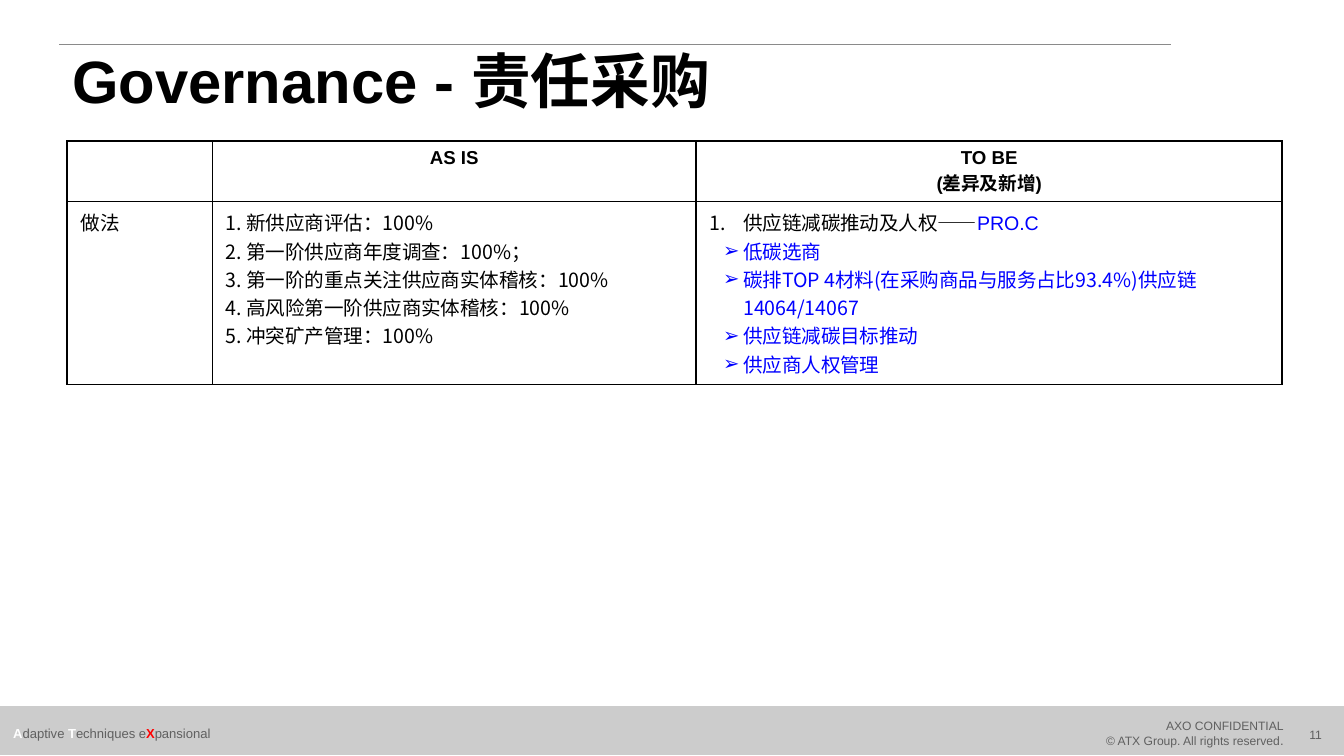
from lxml import etree
from pptx import Presentation
from pptx.dml.color import RGBColor
from pptx.enum.shapes import MSO_CONNECTOR, MSO_SHAPE
from pptx.enum.text import MSO_ANCHOR, PP_ALIGN
from pptx.oxml.ns import qn
from pptx.util import Inches, Pt

LEFT, CENTER, RIGHT = PP_ALIGN.LEFT, PP_ALIGN.CENTER, PP_ALIGN.RIGHT
MIDDLE = MSO_ANCHOR.MIDDLE
RECTANGLE = MSO_SHAPE.RECTANGLE
STRAIGHT = MSO_CONNECTOR.STRAIGHT

LATIN, CHINESE = "Arial", "Noto Sans CJK SC"
BLACK, WHITE, BLUE, RED = "000000", "FFFFFF", "0000FF", "FF0000"
GREY, BAR_GREY, RULE_GREY = "606060", "CCCCCC", "8A8A8A"

COLUMNS = [1.08, 3.6, 4.36]
ROWS = [0.45, 1.36]
HEADINGS = [[], ["AS IS"], ["TO BE", "(差异及新增)"]]
CURRENT = [
    "1. 新供应商评估：100%",
    "2. 第一阶供应商年度调查：100%；",
    "3. 第一阶的重点关注供应商实体稽核：100%",
    "4. 高风险第一阶供应商实体稽核：100%",
    "5. 冲突矿产管理：100%",
]
PLANNED = [
    "低碳选商",
    "碳排TOP 4材料(在采购商品与服务占比93.4%)供应链14064/14067",
    "供应链减碳目标推动",
    "供应商人权管理",
]


def color(value):
    return RGBColor.from_string(value)


def add_span(para, text, size=10.5, font=LATIN, fill=BLACK, bold=False):
    span = para.add_run()
    span.text = text
    span.font.size = Pt(size)
    span.font.name = font
    span.font.bold = bold
    span.font.color.rgb = color(fill)
    east_asian = etree.SubElement(span._r.get_or_add_rPr(), qn("a:ea"))
    east_asian.set("typeface", CHINESE)


def next_para(frame, align=LEFT):
    first = frame.paragraphs[0]
    para = frame.add_paragraph() if first.runs else first
    para.alignment = align
    return para


def add_bullet(para, tag, hanging, **attributes):
    properties = para._p.get_or_add_pPr()
    properties.set("marL", str(Inches(0.25)))
    properties.set("indent", str(-Inches(hanging)))
    etree.SubElement(properties, qn("a:buFont"), typeface=LATIN)
    bullet = etree.SubElement(properties, qn(tag))
    for name, value in attributes.items():
        bullet.set(name, value)


def add_box(page, left, top, width, height):
    box = page.shapes.add_textbox(Inches(left), Inches(top), Inches(width), Inches(height))
    frame = box.text_frame
    frame.word_wrap = True
    frame.vertical_anchor = MIDDLE
    return frame


def add_title(page, left, top, width, height):
    rule = page.shapes.add_connector(
        STRAIGHT, Inches(left), Inches(top), Inches(left + 8.27), Inches(top))
    rule.line.color.rgb = color(RULE_GREY)
    rule.line.width = Pt(0.5)
    etree.SubElement(rule._element.spPr, qn("a:effectLst"))
    para = next_para(add_box(page, left, top + 0.02, width, height))
    para.line_spacing = 0.9
    add_span(para, "Governance - 责任采购", size=32, bold=True)


def style_cell(cell):
    cell.fill.background()
    properties = cell._tc.get_or_add_tcPr()
    for position, side in enumerate(["a:lnL", "a:lnR", "a:lnT", "a:lnB"]):
        border = etree.Element(qn(side), w=str(Pt(1)))
        solid = etree.SubElement(border, qn("a:solidFill"))
        etree.SubElement(solid, qn("a:srgbClr"), val=BLACK)
        properties.insert(position, border)


def add_comparison(page, left, top):
    table = page.shapes.add_table(
        len(ROWS), len(COLUMNS), Inches(left), Inches(top),
        Inches(sum(COLUMNS)), Inches(sum(ROWS))).table
    for column, width in zip(table.columns, COLUMNS):
        column.width = Inches(width)
    for row, height in zip(table.rows, ROWS):
        row.height = Inches(height)
    for cell in table.iter_cells():
        style_cell(cell)

    for index, lines in enumerate(HEADINGS):
        for line in lines:
            para = next_para(table.cell(0, index).text_frame, CENTER)
            add_span(para, line, size=10, bold=True)

    practice, current, planned = [table.cell(1, i).text_frame for i in range(3)]
    add_span(next_para(practice), "做法")
    for line in CURRENT:
        add_span(next_para(current), line, font=CHINESE)

    para = next_para(planned)
    add_bullet(para, "a:buAutoNum", 0.25, type="arabicPeriod")
    add_span(para, "供应链减碳推动及人权——")
    add_span(para, "PRO.C", fill=BLUE)
    for line in PLANNED:
        para = next_para(planned)
        add_bullet(para, "a:buChar", 0.15, char="➢")
        add_span(para, line, font=CHINESE, fill=BLUE)


def add_footer(page, left, top, width, height):
    bar = page.shapes.add_shape(
        RECTANGLE, Inches(left), Inches(top), Inches(width), Inches(height))
    bar.shadow.inherit = False
    bar.fill.solid()
    bar.fill.fore_color.rgb = color(BAR_GREY)
    bar.line.color.rgb = color(BAR_GREY)
    bar.line.width = Pt(1)

    motto = next_para(add_box(page, left, top + 0.04, 1.91, 0.31))
    for initial, rest, fill in [
        ("A", "daptive ", WHITE), ("T", "echniques e", WHITE), ("X", "pansional", RED)
    ]:
        add_span(motto, initial, size=7, fill=fill, bold=True)
        add_span(motto, rest, size=7, fill=GREY)

    notice = add_box(page, left + 7.97, top + 0.04, 1.68, 0.31)
    for line in ["AXO CONFIDENTIAL", "© ATX Group. All rights reserved"]:
        para = next_para(notice, RIGHT)
        add_span(para, line, size=6.5, fill=GREY)
    add_span(para, ".", size=7, fill=GREY)

    number = next_para(add_box(page, left + 9.51, top + 0.06, 0.56, 0.29), CENTER)
    add_span(number, "11", size=6.5, fill=GREY)


def main():
    deck = Presentation()
    deck.slide_width, deck.slide_height = Inches(10), Inches(10 * 9 / 16)
    page = deck.slides.add_slide(deck.slide_layouts[6])
    add_footer(page, 0, 5.26, 10, 0.35)
    add_comparison(page, 0.5, 1.05)
    add_title(page, 0.44, 0.33, 8.62, 0.55)
    deck.save("out.pptx")


if __name__ == "__main__":
    main()
